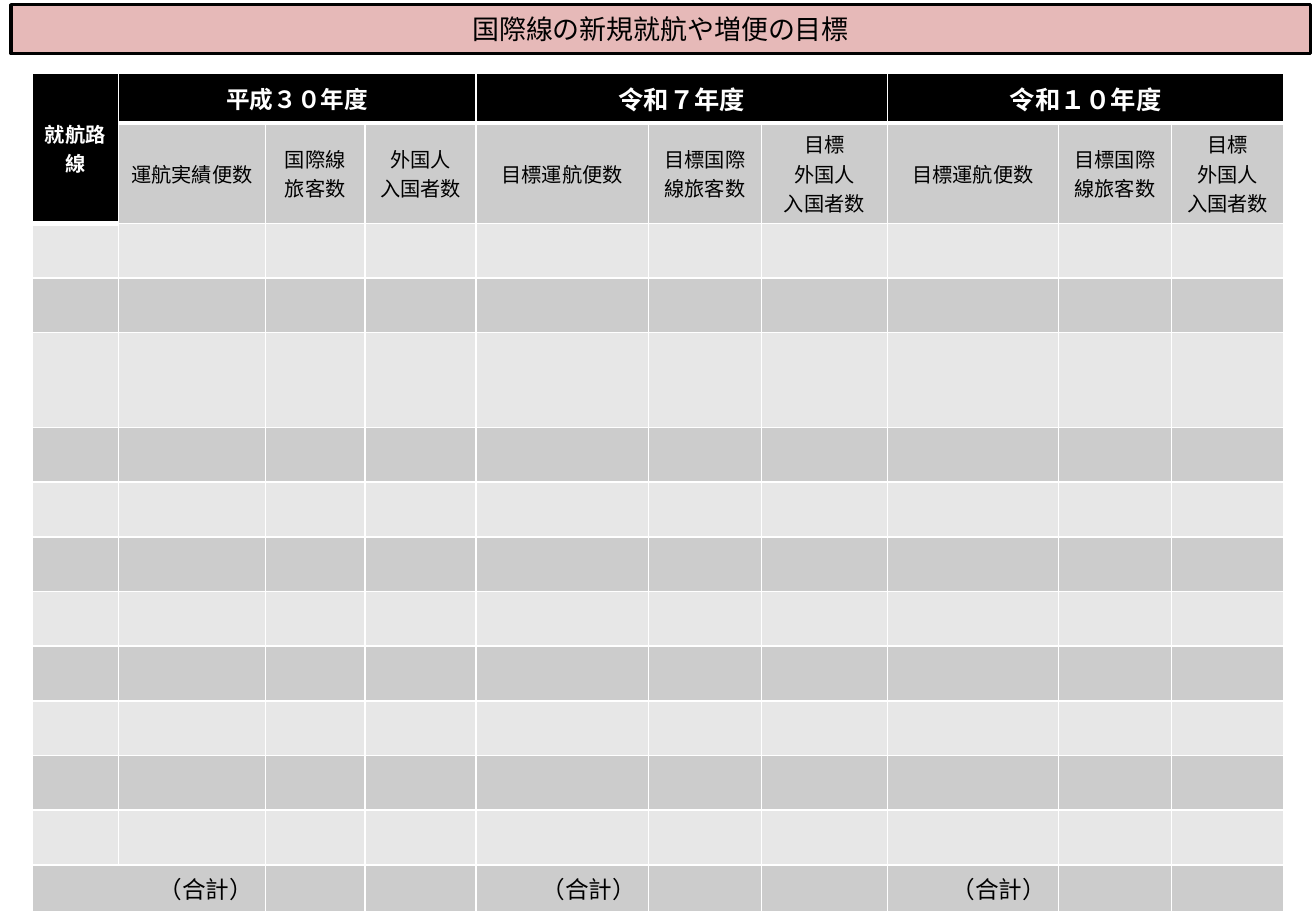
import dataclasses

import lxml.etree
import pptx
import pptx.dml.color
import pptx.enum.text
import pptx.oxml.ns
import pptx.util

Pt = pptx.util.Pt
ALIGN = pptx.enum.text.PP_ALIGN
ANCHOR = pptx.enum.text.MSO_ANCHOR


@dataclasses.dataclass(frozen=True)
class Theme:
    banner: str = "E6B9B8"
    black: str = "000000"
    white: str = "FFFFFF"
    dark_band: str = "CCCCCC"
    light_band: str = "E7E7E7"
    latin_font: str = "Calibri"
    japanese_font: str = "Noto Sans CJK JP"
    title_size: int = 16
    year_size: int = 15
    total_size: int = 14
    label_size: int = 12
    thin_line: int = 1
    thick_line: int = 3


THEME = Theme()

COLUMN_WIDTHS = [51.3, 87.1, 59, 65.8, 102.2, 67, 74.7, 101.3, 67, 66.7]
ROW_HEIGHTS = [29.5, 59.4, 32.4, 32.4, 56.2] + [32.4] * 9
TARGET_LABELS = ["目標運航便数", "目標国際線旅客数", "目標\n外国人\n入国者数"]
# Year, text size, labels of its three columns
YEAR_GROUPS = [
    ("平成３０年度", THEME.total_size, ["運航実績便数", "国際線旅客数", "外国人\n入国者数"]),
    ("令和７年度", THEME.year_size, TARGET_LABELS),
    ("令和１０年度", THEME.year_size, TARGET_LABELS),
]


def color(value):
    return pptx.dml.color.RGBColor.from_string(value)


def write_text(text_frame, text, size, text_color=THEME.black, bold=False,
               align=ALIGN.CENTER, font_name=THEME.latin_font):
    text_frame.text = text
    for paragraph in text_frame.paragraphs:
        paragraph.alignment = align
        for run in paragraph.runs:
            run.font.size = Pt(size)
            run.font.bold = bold
            run.font.color.rgb = color(text_color)
            run.font.name = font_name
            lxml.etree.SubElement(run.font._element, pptx.oxml.ns.qn("a:ea"),
                                  typeface=THEME.japanese_font)


def style_cell(cell, fill_color, top_width, bottom_width):
    properties = cell._tc.get_or_add_tcPr()
    widths = {"lnL": THEME.thin_line, "lnR": THEME.thin_line,
              "lnT": top_width, "lnB": bottom_width}
    for tag, width in widths.items():
        line = lxml.etree.SubElement(properties, pptx.oxml.ns.qn("a:" + tag), w=str(Pt(width)))
        fill = lxml.etree.SubElement(line, pptx.oxml.ns.qn("a:solidFill"))
        lxml.etree.SubElement(fill, pptx.oxml.ns.qn("a:srgbClr"), val=THEME.white)
    cell.fill.solid()
    cell.fill.fore_color.rgb = color(fill_color)


def add_banner(slide, left, top, width, height):
    title = slide.shapes.title
    title.left, title.top = Pt(left), Pt(top)
    title.width, title.height = Pt(width), Pt(height)
    title.fill.solid()
    title.fill.fore_color.rgb = color(THEME.banner)
    title.line.color.rgb = color(THEME.black)
    title.line.width = Pt(2)
    title.text_frame.auto_size = pptx.enum.text.MSO_AUTO_SIZE.NONE
    title.text_frame.vertical_anchor = ANCHOR.MIDDLE
    write_text(title.text_frame, "国際線の新規就航や増便の目標", THEME.title_size,
               font_name=THEME.japanese_font)


def add_target_table(slide, left, top):
    row_count, column_count = len(ROW_HEIGHTS), len(COLUMN_WIDTHS)
    table = slide.shapes.add_table(row_count, column_count, Pt(left), Pt(top),
                                   Pt(sum(COLUMN_WIDTHS)), Pt(sum(ROW_HEIGHTS))).table
    for column, width in zip(table.columns, COLUMN_WIDTHS):
        column.width = Pt(width)
    for row, height in zip(table.rows, ROW_HEIGHTS):
        row.height = Pt(height)

    # Banded fills, with a thick rule under the black header cells
    def is_header(row, column):
        return row == 0 or (row == 1 and column == 0)

    for row in range(row_count):
        for column in range(column_count):
            band = THEME.dark_band if row % 2 else THEME.light_band
            header = is_header(row, column)
            below_header = row > 0 and is_header(row - 1, column) and not header
            ends_header = header and not is_header(row + 1, column)
            spans_down = row == 0 and column == 0
            style_cell(table.cell(row, column),
                       THEME.black if header else band,
                       THEME.thick_line if below_header else THEME.thin_line,
                       THEME.thick_line if ends_header or spans_down else THEME.thin_line)

    # Route heading
    route = table.cell(0, 0)
    route.merge(table.cell(1, 0))
    route.vertical_anchor = ANCHOR.MIDDLE
    write_text(route.text_frame, "就航路線", THEME.label_size, THEME.white, bold=True)

    # Year groups, column labels and totals
    last_row = row_count - 1
    table.cell(last_row, 0).merge(table.cell(last_row, 1))
    for group, (year, size, labels) in enumerate(YEAR_GROUPS):
        first = 1 + 3 * group
        heading = table.cell(0, first)
        heading.merge(table.cell(0, first + 2))
        heading.vertical_anchor = ANCHOR.MIDDLE
        write_text(heading.text_frame, year, size, THEME.white, bold=True)
        for offset, label in enumerate(labels):
            cell = table.cell(1, first + offset)
            cell.vertical_anchor = ANCHOR.MIDDLE
            write_text(cell.text_frame, label, THEME.label_size)
        total = table.cell(last_row, first if group else 0)
        write_text(total.text_frame, "（合計）", THEME.total_size, align=ALIGN.RIGHT)


def main():
    presentation = pptx.Presentation()
    presentation.slide_width, presentation.slide_height = Pt(780), Pt(540)
    slide = presentation.slides.add_slide(presentation.slide_layouts[5])
    add_banner(slide, left=6.6, top=2.8, width=770, height=29)
    add_target_table(slide, left=19, top=43.5)
    presentation.save("out.pptx")


if __name__ == "__main__":
    main()
